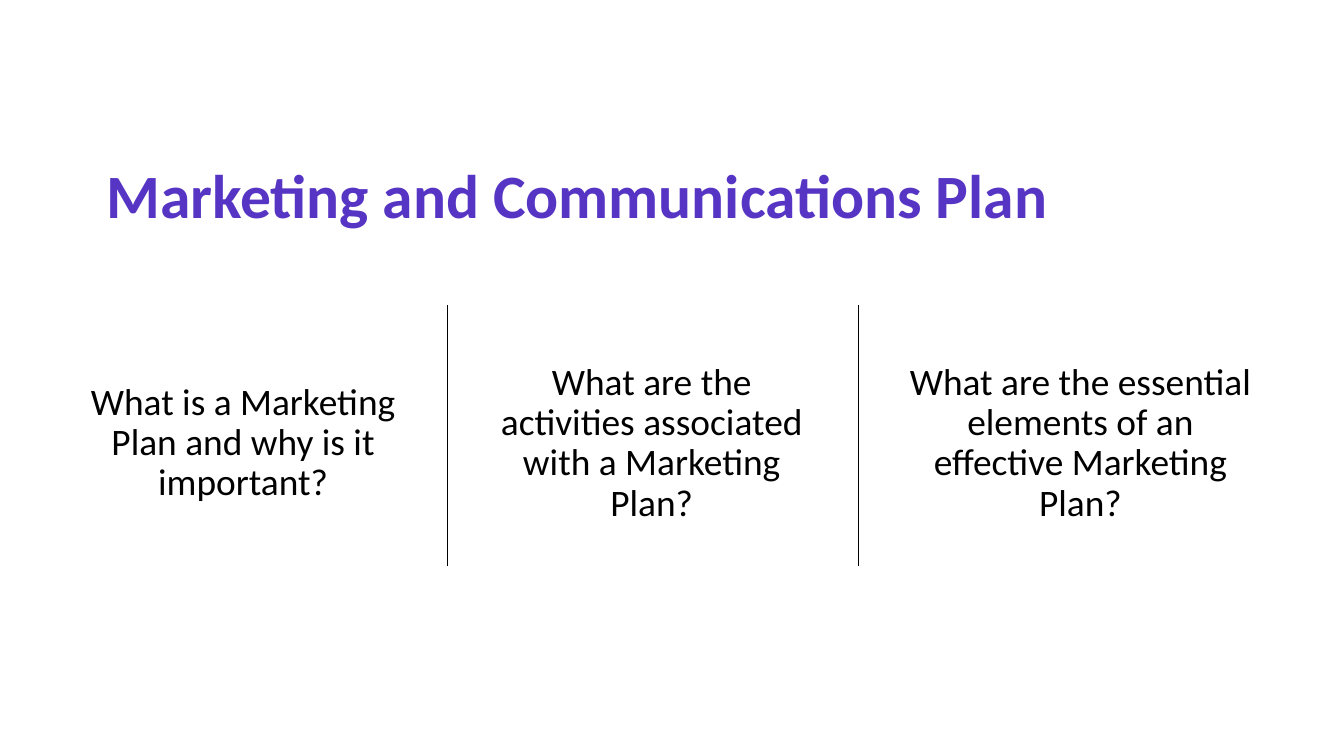
"""Build a slide with a title and three questions split by thin rules."""
from lxml import etree
from pptx import Presentation
from pptx.dml.color import RGBColor
from pptx.enum import shapes, text
from pptx.oxml.ns import qn
from pptx.util import Inches, Pt


def tint(code):
    return RGBColor.from_string(code)


def style(frame, words, size, color, bold, align):
    frame.word_wrap = True
    frame.vertical_anchor = text.MSO_ANCHOR.MIDDLE
    para = frame.paragraphs[0]
    para.text = words
    para.alignment = align
    para.line_spacing = 0.9
    font = para.font
    font.name = "Calibri"
    font.size = Pt(size)
    font.bold = bold
    font.color.rgb = tint(color)


deck = Presentation()
deck.slide_width = Inches(10)
deck.slide_height = Inches(10) * 9 // 16
slide = deck.slides.add_slide(deck.slide_layouts[5])

title = slide.shapes.title
title.left, title.top = Inches(0.69), Inches(1.18)
title.width, title.height = Inches(8.62), Inches(0.59)
style(title.text_frame, "Marketing and Communications Plan", 33, "5735C4", True, text.PP_ALIGN.LEFT)

asks = [
    (2.36, "What is a Marketing Plan and why is it important?"),
    (2.36, "What are the activities associated with a Marketing Plan?"),
    (2.66, "What are the essential elements of an effective Marketing Plan?"),
]
for i, (width, words) in enumerate(asks):
    box = slide.shapes.add_textbox(Inches(0.63 + 3.04 * i), Inches(2.73), Inches(width), Inches(1.14))
    frame = box.text_frame
    frame.margin_left = frame.margin_right = Inches(0.04)
    frame.margin_top = frame.margin_bottom = Inches(0.03)
    style(frame, words, 20, "000000", False, text.PP_ALIGN.CENTER)

for x in (3.33, 6.39):
    rule = slide.shapes.add_connector(
        shapes.MSO_CONNECTOR.STRAIGHT, Inches(x), Inches(2.27), Inches(x), Inches(4.21))
    rule.line.color.rgb = tint("000000")
    rule.line.width = Pt(0.5)
    etree.SubElement(rule._element.spPr, qn("a:effectLst"))

deck.save("out.pptx")
